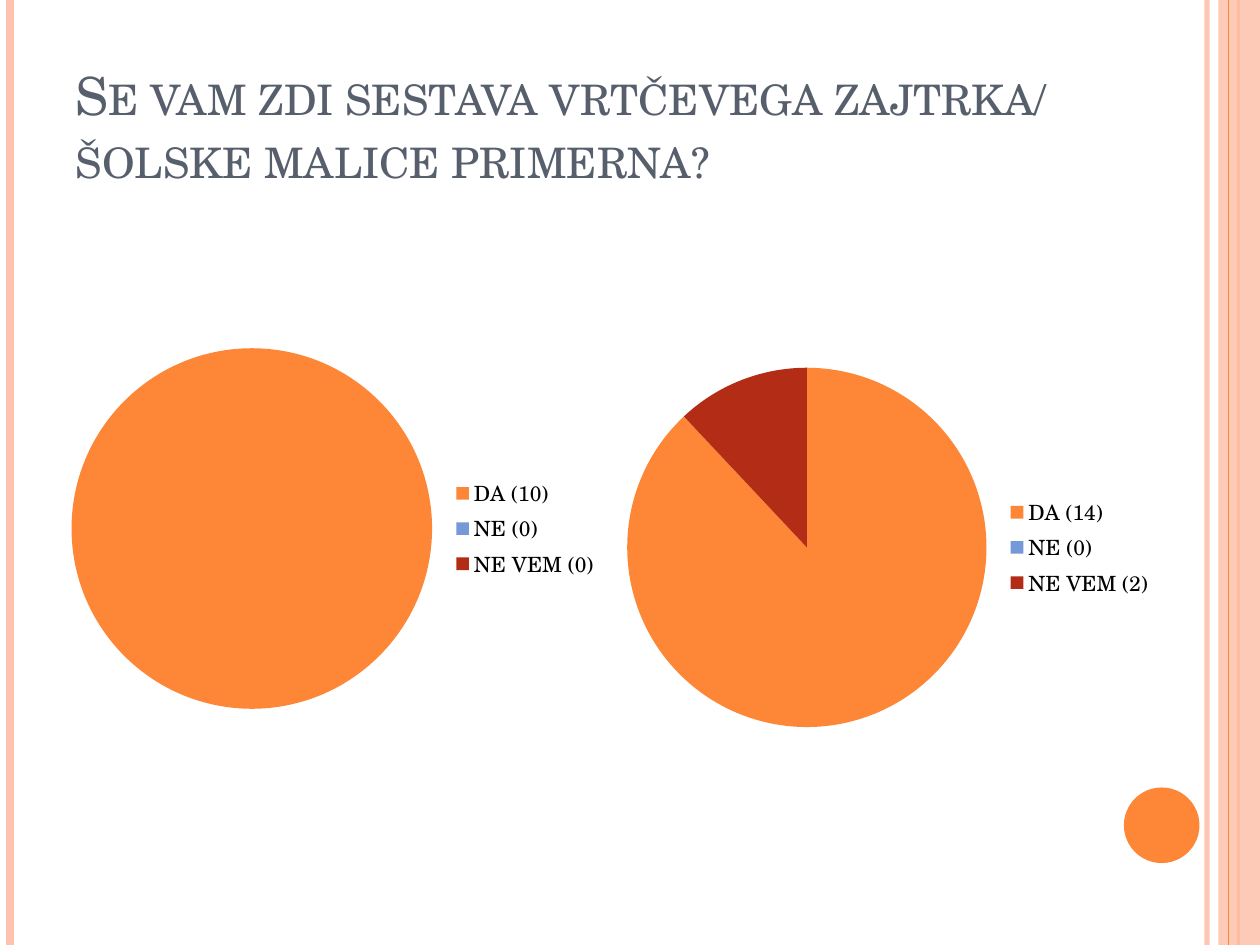
from lxml import etree
from pptx import Presentation
from pptx.chart.data import CategoryChartData
from pptx.dml.color import RGBColor
from pptx.enum.chart import XL_CHART_TYPE as CHART, XL_LEGEND_POSITION as LEGEND
from pptx.enum.shapes import MSO_CONNECTOR as CONN, MSO_SHAPE as SHAPE
from pptx.enum.text import MSO_ANCHOR as ANCHOR, MSO_AUTO_SIZE as AUTO, PP_ALIGN as ALIGN
from pptx.oxml.ns import qn
from pptx.util import Inches, Pt

FONT = "TeX Gyre Schola"
ORANGE, PINK, BLUE, RED = "FE8637", "FEC3AE", "7598D9", "B32C16"


def rgb(value):
    return RGBColor.from_string(value)


def set_alpha(sp, percent):
    color = next(sp._element.spPr.iter(qn("a:srgbClr")))
    etree.SubElement(color, qn("a:alpha")).set("val", str(percent * 1000))


prs = Presentation()
prs.slide_width, prs.slide_height = Inches(10), Inches(7.5)
s = prs.slides.add_slide(prs.slide_layouts[5])

stripes = [
    (9.58, PINK, 3, 93),
    (0.08, PINK, 4.5, 100),
    (9.83, ORANGE, 1.5, 100),
    (9.75, ORANGE, 0.75, 100),
]
for i, (x, color, width, alpha) in enumerate(stripes):
    if i == 3:
        band = s.shapes.add_shape(SHAPE.RECTANGLE, Inches(9.67), 0, Inches(0.33), Inches(7.5))
    line = s.shapes.add_connector(CONN.STRAIGHT, Inches(x), 0, Inches(x), Inches(7.5))
    line.line.color.rgb = rgb(color)
    line.line.width = Pt(width)
    etree.SubElement(line._element.spPr, qn("a:effectLst"))
    if alpha < 100:
        set_alpha(line, alpha)

dot = s.shapes.add_shape(SHAPE.OVAL, Inches(8.92), Inches(6.25), Inches(0.6), Inches(0.6))
for sp, color in ((band, PINK), (dot, ORANGE)):
    sp.shadow.inherit = False
    sp.fill.solid()
    sp.fill.fore_color.rgb = rgb(color)
    sp.line.fill.background()
set_alpha(band, 87)

title = s.shapes.title
title.left, title.top = Inches(0.5), Inches(0.3)
title.width, title.height = Inches(8.17), Inches(1.25)
tf = title.text_frame
tf.text = "Se vam zdi sestava vrtčevega zajtrka/ šolske malice primerna?"
tf.word_wrap = True
tf.auto_size = AUTO.NONE
tf.vertical_anchor = ANCHOR.BOTTOM
p = tf.paragraphs[0]
p.alignment = ALIGN.LEFT
r = p.runs[0]
r.font.name = FONT
r.font.size = Pt(30)
r.font.color.rgb = rgb("575F6D")
r.font._element.set("cap", "small")

pies = [
    ((0.43, 2.41, 4.42, 3.57), ("DA (10)", "NE (0)", "NE VEM (0)"), (100, 0, 0)),
    ((4.84, 2.65, 4.41, 3.39), ("DA (14)", "NE (0)", "NE VEM (2)"), (88, 0, 12)),
]
for box, answers, shares in pies:
    data = CategoryChartData()
    data.categories = answers
    data.add_series("Series 1", shares)
    chart = s.shapes.add_chart(CHART.PIE, *(Inches(v) for v in box), data).chart
    chart.has_title = False
    chart.font.name = FONT
    chart.font.size = Pt(10)
    chart.font.color.rgb = rgb("000000")
    chart.has_legend = True
    chart.legend.position = LEGEND.RIGHT
    chart.legend.include_in_layout = False
    chart.legend.font.size = Pt(12)
    chart.legend.font.name = FONT
    plot = chart.plots[0]
    plot.vary_by_categories = True
    for i, color in enumerate((ORANGE, BLUE, RED)):
        fill = plot.series[0].points[i].format.fill
        fill.solid()
        fill.fore_color.rgb = rgb(color)

prs.save("out.pptx")
